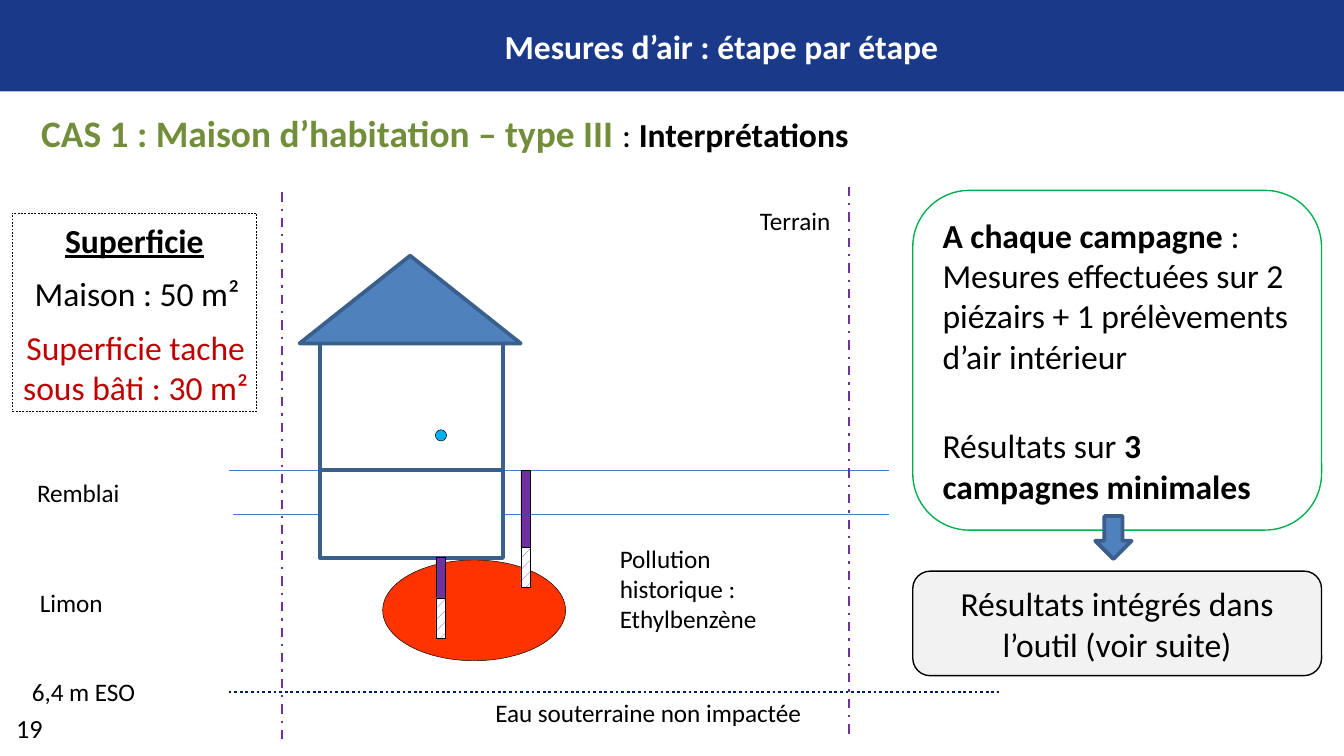
from lxml.etree import SubElement
from pptx import Presentation
from pptx.dml.color import RGBColor
from pptx.enum.dml import MSO_LINE, MSO_PATTERN
from pptx.enum.shapes import MSO_CONNECTOR, MSO_SHAPE
from pptx.enum.text import MSO_ANCHOR, PP_ALIGN
from pptx.oxml.ns import qn
from pptx.util import Pt

HUES = {
    "navy": "1A3989", "white": "FFFFFF", "black": "000000", "green": "728E3A",
    "edge": "3A5F8C", "roof": "4F81BD", "soil": "4B7EBC", "water": "002060",
    "violet": "7030A0", "spill": "FF3300", "frame": "00B050", "red": "C00000",
    "grey": "F2F2F2", "sky": "00B0F0",
}


def hue(name):
    return RGBColor.from_string(HUES[name])


def write(par, text, size=18, color="black", bold=False, under=False):
    run = par.add_run()
    run.text = text
    font = run.font
    font.name, font.size = "Calibri", Pt(size)
    font.bold, font.underline = bold, under
    font.color.rgb = hue(color)


class Board:
    def __init__(self, slide):
        self.slide = slide
        self.shapes = slide.shapes

    def fill_in(self, frame, lines, align, anchor):
        """Each line is a list of (text, format) runs."""
        frame.word_wrap = True
        frame.vertical_anchor = anchor
        for i, runs in enumerate(lines):
            par = frame.paragraphs[0] if i == 0 else frame.add_paragraph()
            par.alignment = align
            for text, style in runs:
                write(par, text, **style)
        return frame

    def title(self, text, x, y, w, h):
        box = self.shapes.title
        box.left, box.top, box.width, box.height = Pt(x), Pt(y), Pt(w), Pt(h)
        runs = [(text, {"color": "white", "bold": True})]
        self.fill_in(box.text_frame, [runs], PP_ALIGN.CENTER, MSO_ANCHOR.MIDDLE)

    def label(self, lines, x, y, w, h):
        box = self.shapes.add_textbox(Pt(x), Pt(y), Pt(w), Pt(h))
        self.fill_in(box.text_frame, lines, PP_ALIGN.LEFT, MSO_ANCHOR.TOP)

    def note(self, text, x, y, w, h=24):
        lines = [[(part, {"size": 13.5})] for part in text.split("\n")]
        self.label(lines, x, y, w, h)

    def shape(self, kind, x, y, w, h, fill=None, line=None, width=0.25,
              dash=None, lines=None, align=PP_ALIGN.CENTER,
              anchor=MSO_ANCHOR.MIDDLE):
        item = self.shapes.add_shape(kind, Pt(x), Pt(y), Pt(w), Pt(h))
        item.shadow.inherit = False
        if fill:
            item.fill.solid()
            item.fill.fore_color.rgb = hue(fill)
        else:
            item.fill.background()
        if line:
            item.line.color.rgb = hue(line)
            item.line.width = Pt(width)
            item.line.dash_style = dash
        else:
            item.line.fill.background()
        if lines:
            self.fill_in(item.text_frame, lines, align, anchor)
        return item

    def rule(self, x1, y1, x2, y2, color, width, dash=None):
        line = self.shapes.add_connector(
            MSO_CONNECTOR.STRAIGHT, Pt(x1), Pt(y1), Pt(x2), Pt(y2))
        line.line.color.rgb = hue(color)
        line.line.width = Pt(width)
        line.line.dash_style = dash
        SubElement(line._element.spPr, qn("a:effectLst"))

    def probe(self, x, y, h, foot=21.5):
        """A solid tube with a hatched screen below it."""
        self.shape(MSO_SHAPE.RECTANGLE, x, y, 5, h, "violet", "black")
        mesh = self.shape(MSO_SHAPE.RECTANGLE, x, y + h, 5, foot, line="black")
        mesh.fill.patterned()
        mesh.fill.pattern = MSO_PATTERN.DASHED_UPWARD_DIAGONAL
        mesh.fill.fore_color.rgb = hue("violet")
        mesh.fill.back_color.rgb = hue("white")


def main():
    deck = Presentation()
    deck.slide_width, deck.slide_height = Pt(720), Pt(405)
    board = Board(deck.slides.add_slide(deck.slide_layouts[5]))
    rect, oval = MSO_SHAPE.RECTANGLE, MSO_SHAPE.OVAL
    soft = MSO_SHAPE.ROUNDED_RECTANGLE
    plain, bold = {}, {"bold": True}

    # Header band; the title is moved in front of it
    band = board.shape(rect, 0, 0, 720, 49, "navy")
    board.title("Mesures d’air : étape par étape", 62.5, 10, 648, 29)
    band._element.addnext(board.shapes.title._element)
    board.label([[("19", {"size": 14})]], 1.5, 378, 40, 24.5)
    board.label([[
        ("CAS 1 : Maison d’habitation – type III ",
         {"size": 20, "color": "green", "bold": True}),
        (": ", plain), ("Interprétations", bold)]], 15, 55.5, 580, 31.5)

    # Ground: spill, soil layers, water table and plot limits
    ground = 252
    board.shape(oval, 205, 300, 98, 54, "spill", "black")
    board.rule(122.5, ground, 476.5, ground, "soil", 0.75)
    board.rule(125, 275.75, 476.5, 275.75, "soil", 0.75)
    board.rule(122.5, 370.75, 535, 370.75, "water", 1.5, MSO_LINE.ROUND_DOT)
    for x, y in ((151, 103), (455, 100)):
        board.rule(x, y, x, y + 293.75, "violet", 1.25, MSO_LINE.DASH_DOT)

    # House: walls, basement, roof
    board.shape(rect, 171.5, 184, 98, ground - 184, None, "edge", 2)
    board.shape(rect, 171.5, ground, 98, 47, "white", "edge", 2)
    board.shape(MSO_SHAPE.ISOSCELES_TRIANGLE, 160.5, 137, 118.5, 47,
                "roof", "edge", 2)

    # Labels
    for text, x, y, w in (
            ("Terrain", 400, 106.5, 76.5),
            ("Remblai", 12.75, 252.25, 76.5),
            ("Limon", 14.25, 311, 132.5),
            ("6,4 m ESO", 10, 359, 76.5),
            ("Eau souterraine non impactée", 258.25, 370, 203)):
        board.note(text, x, y, w)
    board.note("Pollution historique :\nEthylbenzène", 325, 287.5, 100, 56)

    # Floor areas
    board.shape(soft, 1.5, 168.5, 142.5, 56, lines=[[
        ("Superficie tache sous bâti : 30 m²", {"color": "red"})]])
    board.shape(soft, 8, 140.5, 131, 32.5, lines=[[("Maison : 50 m²", plain)]])
    board.shape(rect, 6.5, 114, 131, 106.5, None, "black", 0.25, MSO_LINE.DASH,
                [[("Superficie", {"bold": True, "under": True})]],
                anchor=MSO_ANCHOR.TOP)

    # Campaigns and what follows
    card = board.shape(soft, 489, 102, 219, 182, None, "frame", 0.75, lines=[
        [("A chaque campagne ", bold), (":", plain)],
        [("Mesures effectuées sur 2 piézairs + 1 prélèvements d’air intérieur",
          plain)],
        [("Résultats sur ", plain), ("3 campagnes minimales", bold)],
    ], align=PP_ALIGN.LEFT)
    card.text_frame.paragraphs[2].space_before = Pt(26.5)
    board.shape(soft, 489, 306, 219, 56, "grey", "black", 0.75, lines=[[
        ("Résultats intégrés dans l’outil (voir suite)", plain)]])
    board.shape(MSO_SHAPE.DOWN_ARROW, 586.75, 276.5, 19.5, 23,
                "roof", "edge", 2)

    # Sampling points
    board.shape(oval, 233.25, 230.25, 6, 6, "sky", "black")
    board.probe(233.5, 298.75, 21.5)
    board.probe(279, ground, 41.25)

    deck.save("out.pptx")


if __name__ == "__main__":
    main()
